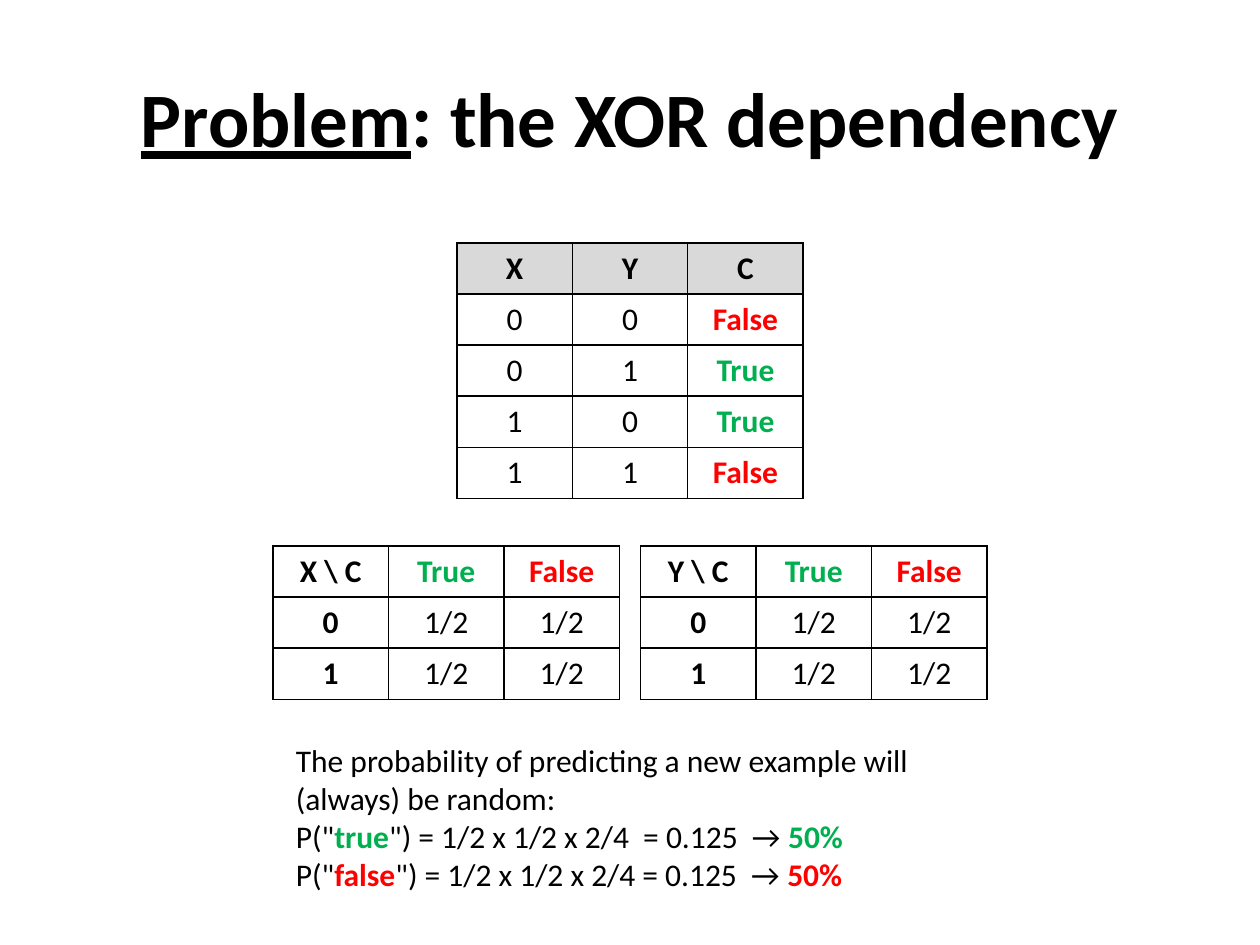
from lxml.etree import SubElement
from pptx import Presentation
from pptx.dml.color import RGBColor
from pptx.enum.text import MSO_ANCHOR, MSO_AUTO_SIZE, PP_ALIGN
from pptx.oxml.ns import qn
from pptx.util import Pt

COLORS = {"text": "000000", "header": "D9D9D9", "true": "00B050", "false": "FF0000"}
COLUMN_WIDTH, ROW_HEIGHT = 66, 29.2


def format_run(run, size, color="text", bold=False):
    run.font.name = "Calibri"
    run.font.size = Pt(size)
    run.font.bold = bold
    run.font.color.rgb = RGBColor.from_string(COLORS[color])


def add_grid(slide, left, top, rows, bold_column=None, header_fill=False):
    """Add a bordered table with a bold first row and, if given, one bold column."""
    column_count = len(rows[0])
    table = slide.shapes.add_table(
        len(rows), column_count, Pt(left), Pt(top),
        Pt(COLUMN_WIDTH * column_count), Pt(ROW_HEIGHT * len(rows))).table
    table.first_row = table.horz_banding = False
    for column in table.columns:
        column.width = Pt(COLUMN_WIDTH)
    for i, values in enumerate(rows):
        table.rows[i].height = Pt(ROW_HEIGHT)
        for j, value in enumerate(values):
            cell = table.cell(i, j)
            properties = cell._tc.get_or_add_tcPr()
            for side in ("lnL", "lnR", "lnT", "lnB"):
                line = SubElement(properties, qn(f"a:{side}"), w=str(Pt(1)))
                fill = SubElement(line, qn("a:solidFill"))
                SubElement(fill, qn("a:srgbClr"), val=COLORS["text"])
            if header_fill and i == 0:
                cell.fill.solid()
                cell.fill.fore_color.rgb = RGBColor.from_string(COLORS["header"])
            else:
                cell.fill.background()
            cell.text = value
            paragraph = cell.text_frame.paragraphs[0]
            paragraph.alignment = PP_ALIGN.CENTER
            color = value.lower() if value in ("True", "False") else "text"
            format_run(paragraph.runs[0], 18, color, i == 0 or j == bold_column)


presentation = Presentation()
presentation.slide_width, presentation.slide_height = Pt(720), Pt(540)
slide = presentation.slides.add_slide(presentation.slide_layouts[5])

title = slide.shapes.title
title.left, title.top, title.width, title.height = Pt(36), Pt(21.6), Pt(648), Pt(90)
title.text_frame.vertical_anchor = MSO_ANCHOR.MIDDLE
title_paragraph = title.text_frame.paragraphs[0]
title_paragraph.alignment = PP_ALIGN.CENTER
for text, underlined in (("Problem", True), (": the XOR dependency", False)):
    run = title_paragraph.add_run()
    run.text = text
    format_run(run, 44, bold=True)
    run.font.underline = underlined

truth_table = [
    ("X", "Y", "C"),
    ("0", "0", "False"),
    ("0", "1", "True"),
    ("1", "0", "True"),
    ("1", "1", "False"),
]
add_grid(slide, 261, 138.8, truth_table, bold_column=2, header_fill=True)

for variable, left in (("X", 156), ("Y", 366)):
    probabilities = [
        (f"{variable} \\ C", "True", "False"),
        ("0", "1/2", "1/2"),
        ("1", "1/2", "1/2"),
    ]
    add_grid(slide, left, 312, probabilities, bold_column=0)

conclusion = slide.shapes.add_textbox(Pt(162), Pt(420), Pt(396), Pt(94.5))
text_frame = conclusion.text_frame
text_frame.word_wrap = True
text_frame.auto_size = MSO_AUTO_SIZE.SHAPE_TO_FIT_TEXT
text_frame.text = "The probability of predicting a new example will (always) be random:"
format_run(text_frame.paragraphs[0].runs[0], 18)
for outcome, product in (("true", "1/2 x 1/2 x 2/4  = 0.125  → "),
                         ("false", "1/2 x 1/2 x 2/4 = 0.125  → ")):
    paragraph = text_frame.add_paragraph()
    for text in ('P("', outcome, f'") = {product}', "50%"):
        run = paragraph.add_run()
        run.text = text
        highlighted = text in (outcome, "50%")
        format_run(run, 18, outcome if highlighted else "text", highlighted)

presentation.save("out.pptx")
